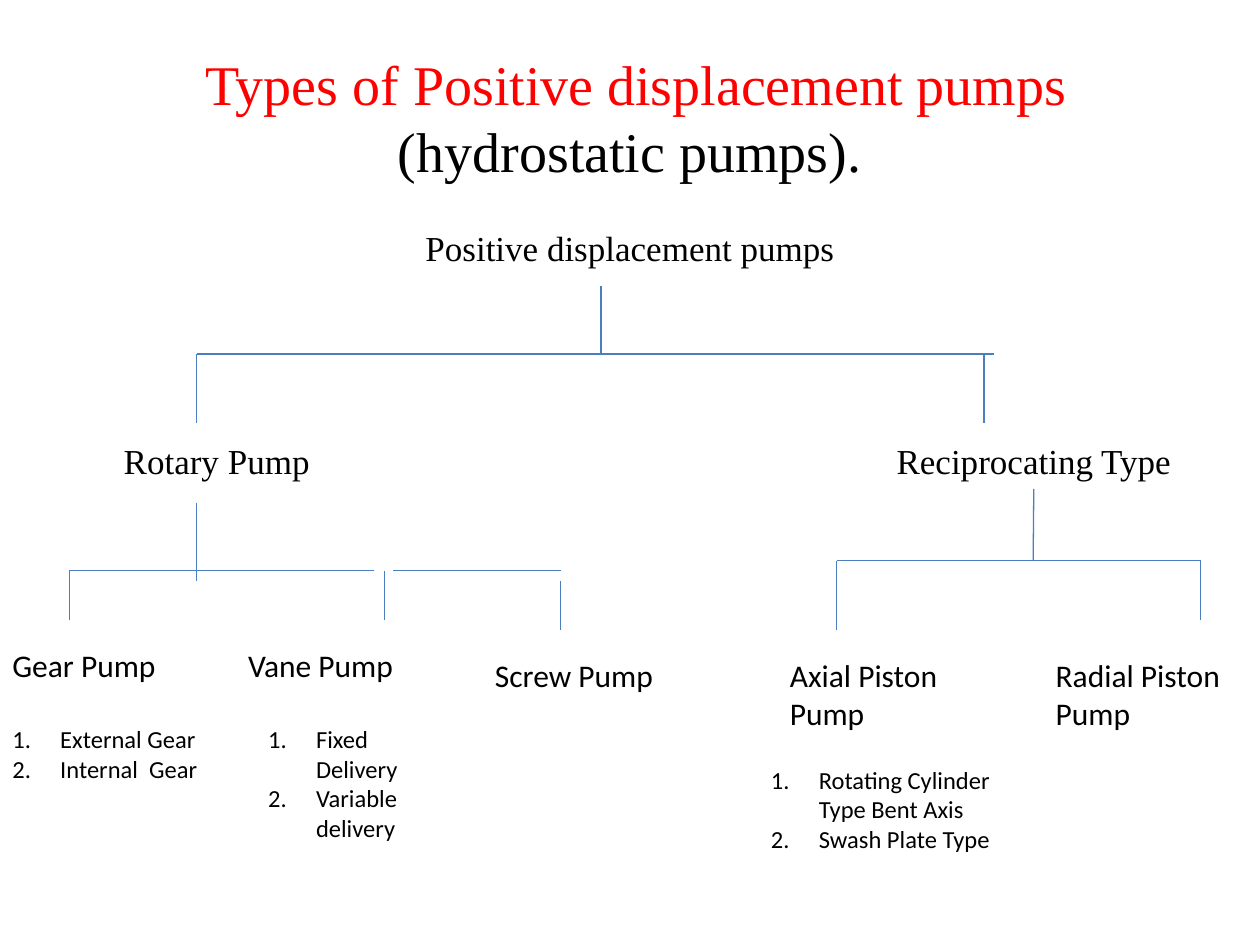
"""Build a slide with a tree of positive displacement pump types."""
from lxml.etree import SubElement as Sub
from pptx import Presentation as Deck
from pptx.dml.color import RGBColor as Color
from pptx.enum.shapes import MSO_CONNECTOR as Link
from pptx.enum.text import MSO_ANCHOR as Anchor, MSO_AUTO_SIZE as Fit, PP_ALIGN as Align
from pptx.oxml.ns import qn
from pptx.util import Inches, Pt

RED = Color(0xFF, 0x00, 0x00)
BLACK = Color(0x00, 0x00, 0x00)
BLUE = Color(0x4B, 0x7E, 0xBC)
SERIF = "Times New Roman"
SANS = "Calibri"

BARS = [
    (2.81, 1.56, 4.77), (2.81, 4.77, 7.89),
    (4.53, 0.55, 2.97), (4.53, 3.12, 4.45),
    (4.45, 6.64, 8.2), (4.45, 8.2, 9.53),
]
DROPS = [
    (4.77, 2.27, 2.81), (1.56, 2.81, 3.36), (7.81, 2.81, 3.36),
    (1.56, 3.99, 4.61), (0.55, 4.53, 4.92), (3.05, 4.53, 4.92),
    (4.45, 4.61, 5), (6.64, 4.45, 5), (9.53, 4.45, 4.92),
]
LEAVES = [
    ("Gear Pump", (0, 5.08, 1.56, 0.4)),
    ("Vane Pump", (1.87, 5.08, 1.48, 0.4)),
    ("Screw Pump", (3.83, 5.16, 1.72, 0.4)),
    ("Axial Piston Pump", (6.17, 5.16, 1.72, 0.71)),
    ("Radial Piston Pump", (8.28, 5.16, 1.72, 0.71)),
]
LISTS = [
    (["External Gear", "Internal  Gear"], (0, 5.7, 1.87, 0.57)),
    (["Fixed  Delivery", "Variable delivery"], (2.03, 5.7, 1.41, 1.04)),
    (["Rotating Cylinder Type Bent Axis", "Swash Plate Type"], (6.02, 6.02, 2.11, 0.81)),
]


def number(para):
    """Give a paragraph an automatic number and a hanging indent."""
    props = para._p.get_or_add_pPr()
    props.set("marL", str(Inches(0.38)))
    props.set("indent", str(Inches(-0.38)))
    Sub(props, qn("a:buFont"), typeface="+mj-lt")
    Sub(props, qn("a:buAutoNum"), type="arabicPeriod")


def write(slide, paras, area, size=20, font=SERIF, align=Align.CENTER,
          anchor=Anchor.TOP, fit=Fit.SHAPE_TO_FIT_TEXT, listed=False):
    """Add a text box whose paragraphs are lists of (text, colour) runs."""
    box = slide.shapes.add_textbox(*map(Inches, area))
    frame = box.text_frame
    frame.word_wrap = True
    frame.auto_size = fit
    frame.vertical_anchor = anchor
    for i, runs in enumerate(paras):
        para = frame.add_paragraph() if i else frame.paragraphs[0]
        para.alignment = align
        if listed:
            number(para)
        for text, color in runs:
            run = para.add_run()
            run.text = text
            run.font.size = Pt(size)
            run.font.name = font
            run.font.color.rgb = color
    return box


def wire(slide, *ends):
    """Add a thin straight line between two points."""
    line = slide.shapes.add_connector(Link.STRAIGHT, *map(Inches, ends))
    line.line.color.rgb = BLUE
    line.line.width = Pt(0.75)
    Sub(line._element.spPr, qn("a:effectLst"))
    return line


def main():
    """Build and save the slide."""
    deck = Deck()
    deck.slide_width, deck.slide_height = Inches(10), Inches(7.5)
    slide = deck.slides.add_slide(deck.slide_layouts[6])

    title = [(" Types of Positive displacement pumps ", RED), ("(hydrostatic pumps).", BLACK)]
    write(slide, [title], (0.5, 0.3, 9, 1.25), size=32, anchor=Anchor.MIDDLE, fit=Fit.NONE)
    write(slide, [[("Positive displacement pumps", BLACK)]], (0, 1.75, 10, 5.44), fit=Fit.NONE)
    write(slide, [[("Rotary Pump", BLACK)]], (0.55, 3.44, 2.34, 0.44))
    recip = write(slide, [[("Reciprocating Type", BLACK)]], (6.64, 3.44, 3.13, 0.44))

    for y, left, right in BARS:
        wire(slide, left, y, right, y)
    for x, top, end in DROPS:
        wire(slide, x, top, x, end)
    wire(slide, 8.2, 3.88, 8.2, 4.45).begin_connect(recip, 2)

    for name, area in LEAVES:
        write(slide, [[(name, BLACK)]], area, size=18, font=SANS, align=Align.LEFT)
    for items, area in LISTS:
        write(slide, [[(item, BLACK)] for item in items], area,
              size=14, font=SANS, align=Align.LEFT, listed=True)

    deck.save("out.pptx")


if __name__ == "__main__":
    main()
